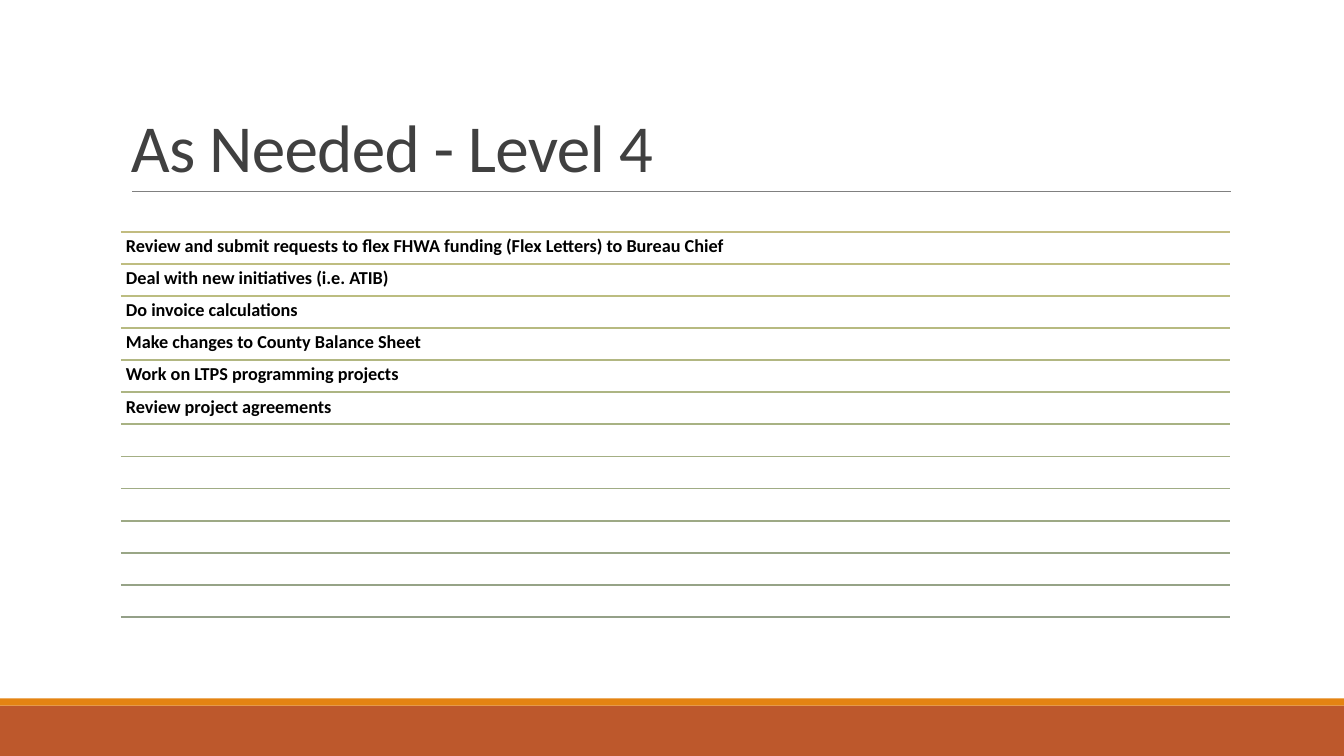
import lxml.etree
import pptx
import pptx.util
import pptx.dml.color
import pptx.enum.shapes
import pptx.enum.text
import pptx.oxml.ns

Inches = pptx.util.Inches
Pt = pptx.util.Pt

TASKS = [
    "Review and submit requests to flex FHWA funding (Flex Letters) to Bureau Chief",
    "Deal with new initiatives (i.e. ATIB)",
    "Do invoice calculations",
    "Make changes to County Balance Sheet",
    "Work on LTPS programming projects",
    "Review project agreements",
]
# One colour per rule; rules beyond the last task stay empty
RULE_COLOURS = [
    "C2BC80", "BFBD80", "BCBD81", "B7BA81", "B2B782", "ADB583", "A8B283",
    "A4AF84", "A0AC85", "9DA985", "99A686", "96A387", "94A088",
]


def colour(code):
    return pptx.dml.color.RGBColor.from_string(code)


def add_band(page, left, top, width, height, fill):
    band = page.shapes.add_shape(
        pptx.enum.shapes.MSO_SHAPE.RECTANGLE,
        Inches(left), Inches(top), Inches(width), Inches(height))
    band.shadow.inherit = False
    band.fill.solid()
    band.fill.fore_color.rgb = colour(fill)
    band.line.fill.background()


def add_rule(page, left, top, width, code, weight):
    rule = page.shapes.add_connector(
        pptx.enum.shapes.MSO_CONNECTOR.STRAIGHT,
        Inches(left), Inches(top), Inches(left + width), Inches(top))
    rule.line.color.rgb = colour(code)
    rule.line.width = Pt(weight)
    # An empty effect list removes the shadow
    lxml.etree.SubElement(rule._element.spPr, pptx.oxml.ns.qn("a:effectLst"))


def add_text(page, left, top, width, height, text, size, code, spacing):
    box = page.shapes.add_textbox(
        Inches(left), Inches(top), Inches(width), Inches(height))
    box.text_frame.word_wrap = True
    box.text_frame.text = text
    para = box.text_frame.paragraphs[0]
    para.line_spacing = spacing
    font = para.runs[0].font
    font.name = "Calibri"
    font.size = Pt(size)
    font.color.rgb = colour(code)
    return box


def add_footer(page, left, top, width, height):
    stripe = 0.07
    add_band(page, left, top + stripe, width, height - stripe, "BD582C")
    add_band(page, left, top, width, stripe, "E48312")


def add_title(page, left, top, width, height):
    add_rule(page, left + 0.11, top + height, width - 0.1, "808080", 0.5)
    box = add_text(page, left, top, width, height,
                   "As Needed - Level 4", 48, "404040", 0.85)
    box.text_frame.vertical_anchor = pptx.enum.text.MSO_ANCHOR.BOTTOM
    # Tighten the letters by half a point
    span = box.text_frame.paragraphs[0].runs[0]
    span._r.get_or_add_rPr().set("spc", "-50")


def add_task_list(page, left, top, width, height):
    pitch = height / (len(RULE_COLOURS) - 1)
    for row, code in enumerate(RULE_COLOURS):
        row_top = top + row * pitch
        add_rule(page, left, row_top, width, code, 1.25)
        if row < len(TASKS):
            box = add_text(page, left, row_top, width, pitch,
                           TASKS[row], 13, "000000", 0.9)
            frame = box.text_frame
            frame.margin_left = frame.margin_right = Inches(0.05)
            frame.margin_top = frame.margin_bottom = Inches(0.05)
            frame.paragraphs[0].runs[0].font.bold = True


def main():
    deck = pptx.Presentation()
    deck.slide_width = Inches(13.33)
    deck.slide_height = Inches(7.5)
    page = deck.slides.add_slide(deck.slide_layouts[6])
    page.background.fill.solid()
    page.background.fill.fore_color.rgb = colour("FFFFFF")

    add_footer(page, 0, 6.93, 13.33, 0.57)
    add_title(page, 1.2, 0.31, 11, 1.59)
    add_task_list(page, 1.2, 2.3, 11, 3.82)

    deck.save("out.pptx")


if __name__ == "__main__":
    main()
